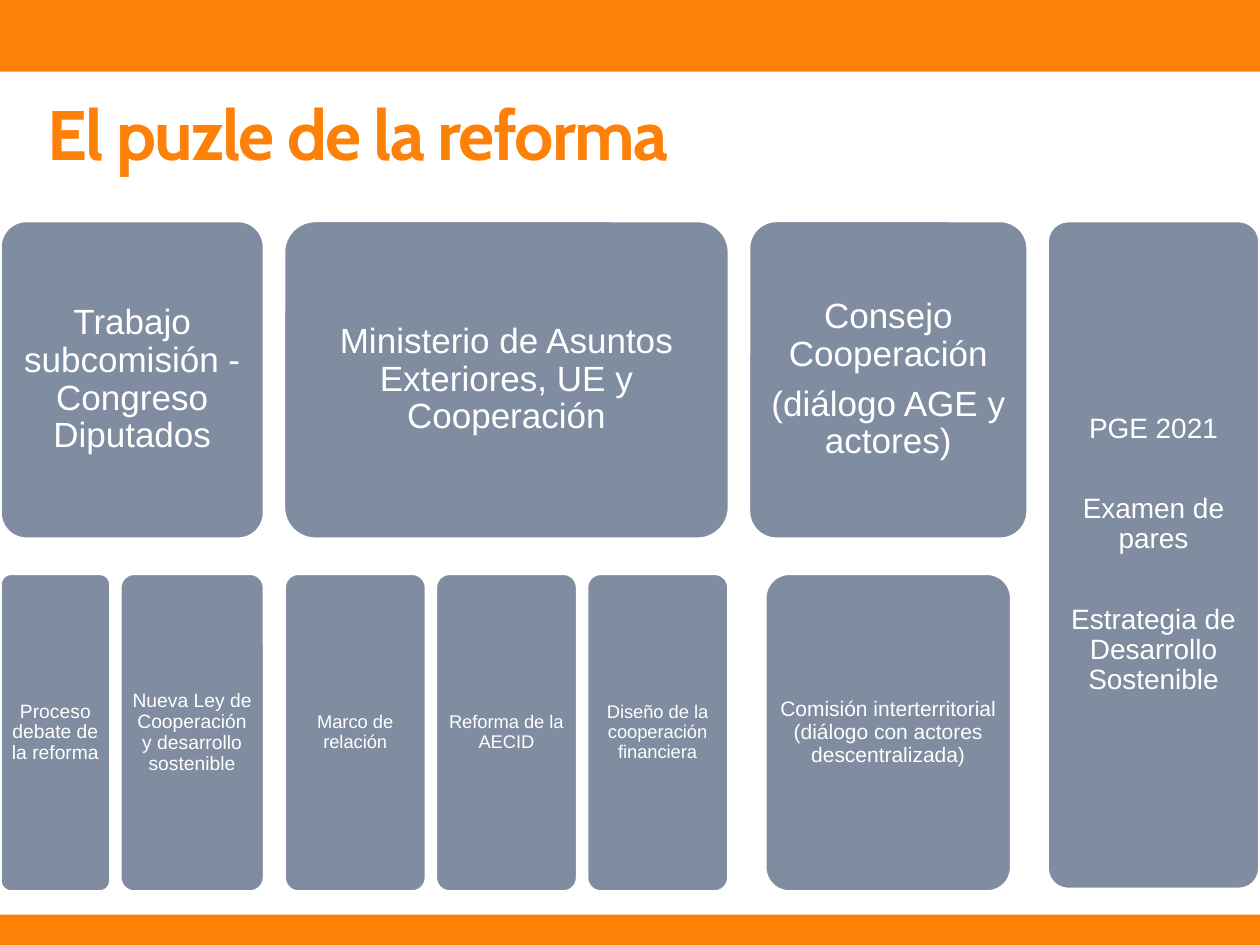
"""Build the slide "El puzle de la reforma": a grid of rounded blocks between two bands."""
from pptx import Presentation, util as u
from pptx.dml.color import RGBColor
from pptx.enum import shapes, text

COLORS = {"orange": "FD8008", "block": "808DA0", "white": "FFFFFF"}
RGB = {name: RGBColor.from_string(value) for name, value in COLORS.items()}
W, H = 10, 7.5
TOP, LOW, ROW_H, TALL_H = 1.75, 4.55, 2.53, 5.31
GAP, SUBGAP = 0.15, 0.07

prs = Presentation()
prs.slide_width, prs.slide_height = u.Inches(W), u.Inches(H)
s = prs.slides.add_slide(prs.slide_layouts[6])


def add_box(kind, x, y, w, h, fill):
    sp = s.shapes.add_shape(kind, u.Inches(x), u.Inches(y), u.Inches(w), u.Inches(h))
    sp.shadow.inherit = False
    sp.fill.solid()
    sp.fill.fore_color.rgb = RGB[fill]
    sp.line.fill.background()
    return sp


def add_block(x, y, w, h, paragraphs, size, inset, gap):
    sp = add_box(shapes.MSO_SHAPE.ROUNDED_RECTANGLE, x, y, w, h, "block")
    sp.adjustments[0] = 0.1
    sp.line.color.rgb = RGB["white"]
    sp.line.width = u.Pt(2.08)
    tf = sp.text_frame
    tf.word_wrap = True
    tf.vertical_anchor = text.MSO_ANCHOR.MIDDLE
    tf.margin_left = tf.margin_right = tf.margin_top = tf.margin_bottom = u.Inches(inset)
    for i, words in enumerate(paragraphs):
        p = tf.paragraphs[0] if i == 0 else tf.add_paragraph()
        p.text = words
        p.alignment = text.PP_ALIGN.CENTER
        p.line_spacing = 0.9
        if i:
            p.space_before = u.Pt(gap)
        p.font.name, p.font.size = "Arial", u.Pt(size)
        p.font.color.rgb = RGB["white"]


for y, h in [(0, 0.57), (7.26, 0.24)]:
    add_box(shapes.MSO_SHAPE.RECTANGLE, 0, y, W, h, "orange")

title = s.shapes.add_textbox(u.Inches(0.28), u.Inches(0.67), u.Inches(9), u.Inches(1.08))
tf = title.text_frame
tf.word_wrap = True
p = tf.paragraphs[0]
r = p.add_run()
r.text = "El puzle de la reforma"
r.font.name, r.font.size, r.font.bold = "Cabin", u.Pt(40), True
r.font.color.rgb = RGB["orange"]
r.font._element.set("spc", "-100")

columns = [
    (2.1, ["Trabajo subcomisión - Congreso Diputados"], 11, [
        (0.88, "Proceso debate de la reforma"),
        (1.15, "Nueva Ley de Cooperación y desarrollo sostenible")]),
    (3.54, ["Ministerio de Asuntos Exteriores, UE y Cooperación"], 10.5, [
        (1.13, "Marco de relación"),
        (1.13, "Reforma de la AECID"),
        (1.13, "Diseño de la cooperación financiera")]),
    (2.22, ["Consejo Cooperación", "(diálogo AGE y actores)"], 12, [
        (1.96, "Comisión interterritorial (diálogo con actores descentralizada)")]),
]

x = 0
for width, heading, size, children in columns:
    add_block(x, TOP, width, ROW_H, heading, 20, 0.08, 7)
    used = sum(w for w, _ in children) + SUBGAP * (len(children) - 1)
    left = x + (width - used) / 2
    for w, words in children:
        add_block(left, LOW, w, ROW_H, [words], size, 0.05, 0)
        left += w + SUBGAP
    x += width + GAP

add_block(x, TOP, W - x, TALL_H,
          ["PGE 2021", "Examen de pares", "Estrategia de Desarrollo Sostenible"], 16, 0.07, 28.5)

prs.save("out.pptx")
